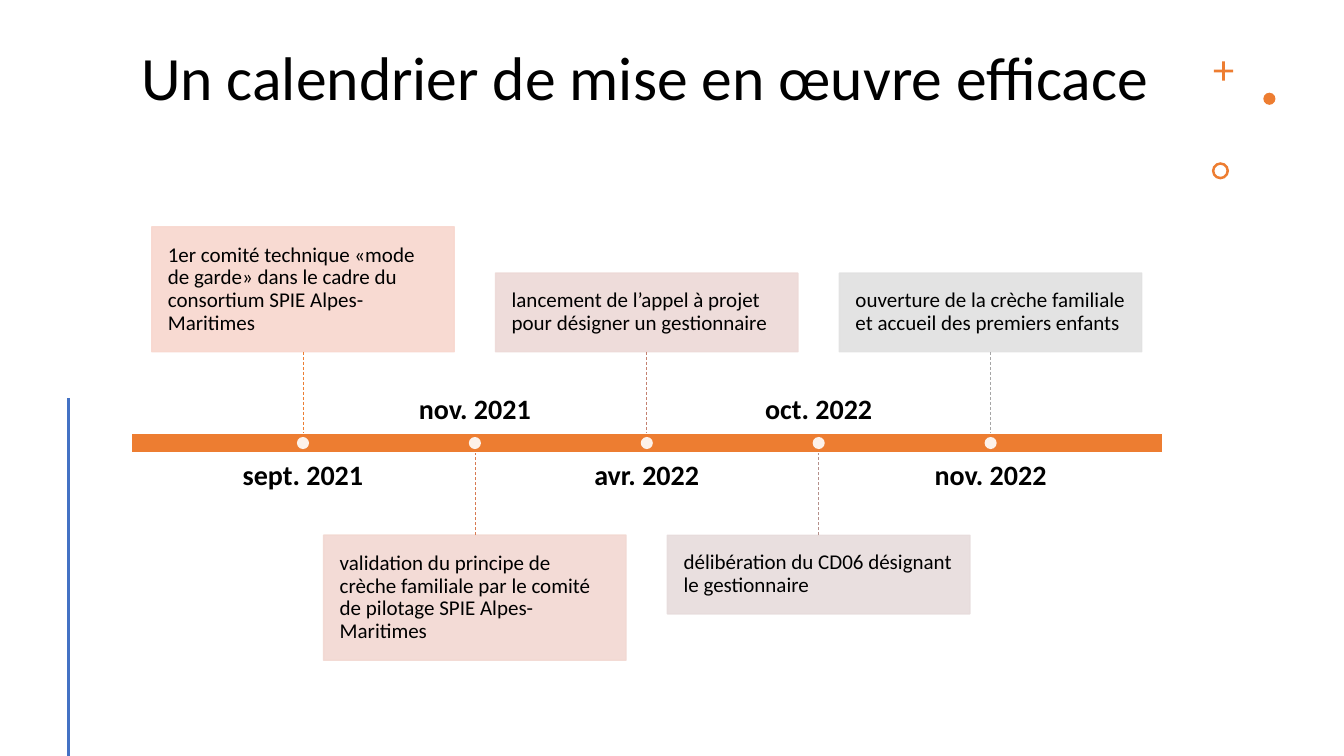
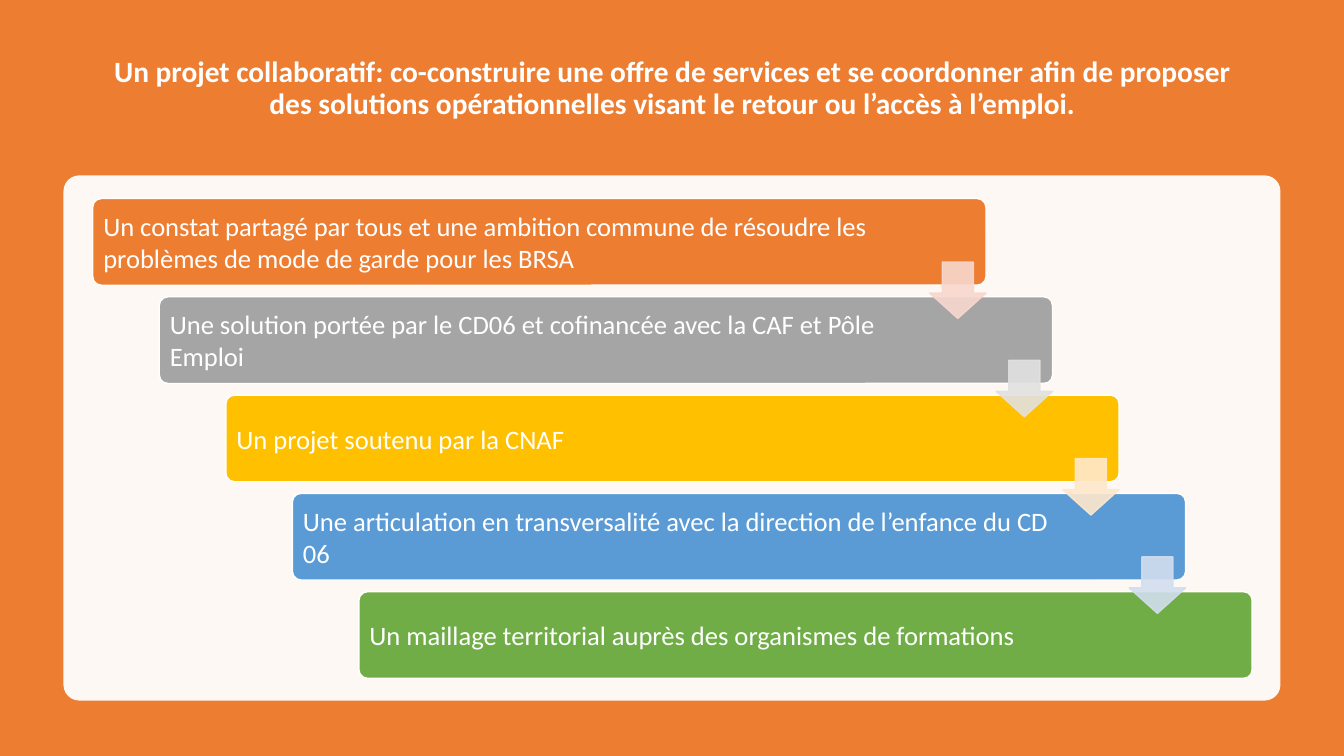
from lxml.etree import SubElement
from pptx import Presentation
from pptx.dml.color import RGBColor
from pptx.enum.dml import MSO_LINE
from pptx.enum.shapes import MSO_CONNECTOR, MSO_SHAPE
from pptx.enum.text import MSO_ANCHOR, MSO_AUTO_SIZE, PP_ALIGN
from pptx.oxml.ns import qn
from pptx.util import Inches, Pt

FONT = "Calibri"
TITLE_ONLY = 5
COLORS = {
    "orange": "ED7D31",
    "blue": "4472C4",
    "white": "FFFFFF",
    "black": "000000",
    "gray": "A5A5A5",
    "gold": "FFC000",
    "sky": "5B9BD5",
    "green": "70AD47",
    "peach": "F8D7CE",
    "rose": "F2D8D2",
    "blush": "EDD9D7",
    "mauve": "E7DCDC",
    "silver": "E1E1E1",
    "cream": "FFE8CC",
    "ice": "D2DEEF",
    "copper": "D87A51",
    "clay": "C48170",
    "taupe": "B4908B",
}

BAR_LEFT, BAR_TOP, BAR_WIDTH, BAR_HEIGHT = 1.3, 4.3, 10.23, 0.19
CARD_WIDTH, UPPER_CARD_BOTTOM, LOWER_CARD_TOP = 3, 3.49, 5.31
EVENTS = [
    ("sept. 2021", "1er comité technique «mode de garde» dans le cadre du consortium SPIE Alpes-Maritimes",
     1.24, "peach", "orange"),
    ("nov. 2021", "validation du principe de crèche familiale par le comité de pilotage SPIE Alpes-Maritimes",
     1.24, "rose", "copper"),
    ("avr. 2022", "lancement de l’appel à projet pour désigner un gestionnaire",
     0.78, "blush", "clay"),
    ("oct. 2022", "délibération du CD06 désignant le gestionnaire",
     0.78, "mauve", "taupe"),
    ("nov. 2022", "ouverture de la crèche familiale et accueil des premiers enfants",
     0.78, "silver", "gray"),
]

STEP_LEFT, STEP_TOP, STEP_WIDTH, STEP_HEIGHT = 0.92, 1.97, 8.86, 0.86
STEP_SHIFT = (3.56 - STEP_LEFT) / 4
STEP_PITCH = (5.87 - STEP_TOP) / 4
ARROW_SIZE = 0.56
STEPS = [
    ("Un constat partagé par tous et une ambition commune de résoudre les problèmes de mode de garde pour les BRSA",
     "orange", 1.06),
    ("Une solution portée par le CD06 et cofinancée avec la CAF et Pôle Emploi", "gray", 1.3),
    ("Un projet soutenu par la CNAF", "gold", 1.3),
    ("Une articulation en transversalité avec la direction de l’enfance du CD 06", "sky", 1.3),
    ("Un maillage territorial auprès des organismes de formations", "green", 1.3),
]
ARROW_COLORS = ["peach", "silver", "cream", "ice"]


def rgb(name):
    return RGBColor.from_string(COLORS[name])


def set_text(shape, text, size, color, bold=False, align=PP_ALIGN.LEFT,
             anchor=MSO_ANCHOR.MIDDLE, spacing=0.9, insets=(0, 0, 0, 0)):
    frame = shape.text_frame
    frame.text = text
    frame.word_wrap = True
    frame.auto_size = MSO_AUTO_SIZE.NONE
    frame.vertical_anchor = anchor
    frame.margin_left, frame.margin_top, frame.margin_right, frame.margin_bottom = map(Inches, insets)
    paragraph = frame.paragraphs[0]
    paragraph.alignment = align
    paragraph.line_spacing = spacing
    for run in paragraph.runs:
        run.font.name = FONT
        run.font.size = Pt(size)
        run.font.bold = bold
        run.font.color.rgb = rgb(color)


def add_titled_slide(presentation, title, box, **style):
    slide = presentation.slides.add_slide(presentation.slide_layouts[TITLE_ONLY])
    shape = slide.shapes.title
    shape.left, shape.top, shape.width, shape.height = map(Inches, box)
    set_text(shape, title, insets=(0.1, 0.05, 0.1, 0.05), **style)
    return slide


def add_box(slide, kind, box, fill, line=None, opacity=100, adjustments=()):
    shape = slide.shapes.add_shape(kind, *map(Inches, box))
    shape.shadow.inherit = False
    for index, value in enumerate(adjustments):
        shape.adjustments[index] = value
    shape.fill.solid()
    shape.fill.fore_color.rgb = rgb(fill)
    if line:
        shape.line.color.rgb = rgb(line)
        shape.line.width = Pt(1)
    else:
        shape.line.fill.background()
    if opacity < 100:
        for color in shape._element.spPr.iter(qn("a:srgbClr")):
            SubElement(color, qn("a:alpha")).set("val", str(opacity * 1000))
    return shape


def add_line(slide, start, end, color, width):
    line = slide.shapes.add_connector(MSO_CONNECTOR.STRAIGHT, *map(Inches, start + end))
    line.line.color.rgb = rgb(color)
    line.line.width = Pt(width)
    SubElement(line._element.spPr, qn("a:effectLst"))
    return line


def add_decorations(slide):
    add_box(slide, MSO_SHAPE.CROSS, (12.04, 0.61, 0.19, 0.19), "orange", adjustments=[0.43])
    add_box(slide, MSO_SHAPE.OVAL, (12.53, 0.92, 0.12, 0.12), "orange")
    add_box(slide, MSO_SHAPE.DONUT, (12.02, 1.61, 0.17, 0.17), "orange", adjustments=[0.15])
    add_line(slide, (0.68, 3.95), (0.68, 7.5), "blue", 2)


def add_event(slide, center, above, date, text, height, fill, line_color):
    card_top = UPPER_CARD_BOTTOM - height if above else LOWER_CARD_TOP
    card = add_box(slide, MSO_SHAPE.RECTANGLE,
                   (center - CARD_WIDTH / 2, card_top, CARD_WIDTH, height), fill, fill, 90)
    set_text(card, text, 15, "black", insets=(0.16, 0.16, 0.16, 0.16))

    card_edge = UPPER_CARD_BOTTOM if above else LOWER_CARD_TOP
    bar_edge = BAR_TOP if above else BAR_TOP + BAR_HEIGHT
    leader = add_line(slide, (center, card_edge), (center, bar_edge), line_color, 0.5)
    leader.line.dash_style = MSO_LINE.DASH
    leader.begin_connect(card, 2 if above else 0)

    label_width, label_top = 2.73, 4.58 if above else 3.68
    label = slide.shapes.add_textbox(
        *map(Inches, (center - label_width / 2, label_top, label_width, 0.54)))
    set_text(label, date, 20, "black", bold=True, align=PP_ALIGN.CENTER,
             anchor=MSO_ANCHOR.TOP if above else MSO_ANCHOR.BOTTOM)

    dot = 0.12
    add_box(slide, MSO_SHAPE.OVAL,
            (center - dot / 2, BAR_TOP + (BAR_HEIGHT - dot) / 2, dot, dot), "white", opacity=90)


def build_calendar(presentation):
    slide = add_titled_slide(presentation, "Un calendrier de mise en œuvre efficace",
                             (1.3, 0.42, 10.23, 1.31), size=44, color="black",
                             anchor=MSO_ANCHOR.TOP)
    add_decorations(slide)
    add_box(slide, MSO_SHAPE.RECTANGLE, (BAR_LEFT, BAR_TOP, BAR_WIDTH, BAR_HEIGHT), "orange", "white")
    pitch = BAR_WIDTH / (len(EVENTS) + 1)
    for index, event in enumerate(EVENTS):
        add_event(slide, BAR_LEFT + pitch * (index + 1), index % 2 == 0, *event)


def build_project(presentation):
    slide = add_titled_slide(
        presentation,
        "Un projet collaboratif: co-construire une offre de services et se coordonner afin de proposer "
        "des solutions opérationnelles visant le retour ou l’accès à l’emploi.",
        (0.92, 0.5, 11.5, 0.76), size=21, color="white", bold=True, align=PP_ALIGN.CENTER)
    slide.background.fill.solid()
    slide.background.fill.fore_color.rgb = rgb("orange")
    add_box(slide, MSO_SHAPE.ROUNDED_RECTANGLE, (0.63, 1.74, 12.07, 5.21), "white",
            opacity=95, adjustments=[0.03])
    for index, (text, fill, right_inset) in enumerate(STEPS):
        box = (STEP_LEFT + index * STEP_SHIFT, STEP_TOP + index * STEP_PITCH, STEP_WIDTH, STEP_HEIGHT)
        step = add_box(slide, MSO_SHAPE.ROUNDED_RECTANGLE, box, fill, "white", adjustments=[0.1])
        set_text(step, text, 19, "white", spacing=1, insets=(0.08, 0.08, right_inset, 0.08))
    for index, color in enumerate(ARROW_COLORS):
        left = STEP_LEFT + STEP_WIDTH - ARROW_SIZE + index * STEP_SHIFT
        box = (left, 2.6 + index * STEP_PITCH, ARROW_SIZE, ARROW_SIZE)
        add_box(slide, MSO_SHAPE.DOWN_ARROW, box, color, color, 90, adjustments=[0.55, 0.45])


def main():
    presentation = Presentation()
    presentation.slide_width = Inches(13.33)
    presentation.slide_height = Inches(7.5)
    build_calendar(presentation)
    build_project(presentation)
    presentation.save("out.pptx")


if __name__ == "__main__":
    main()
